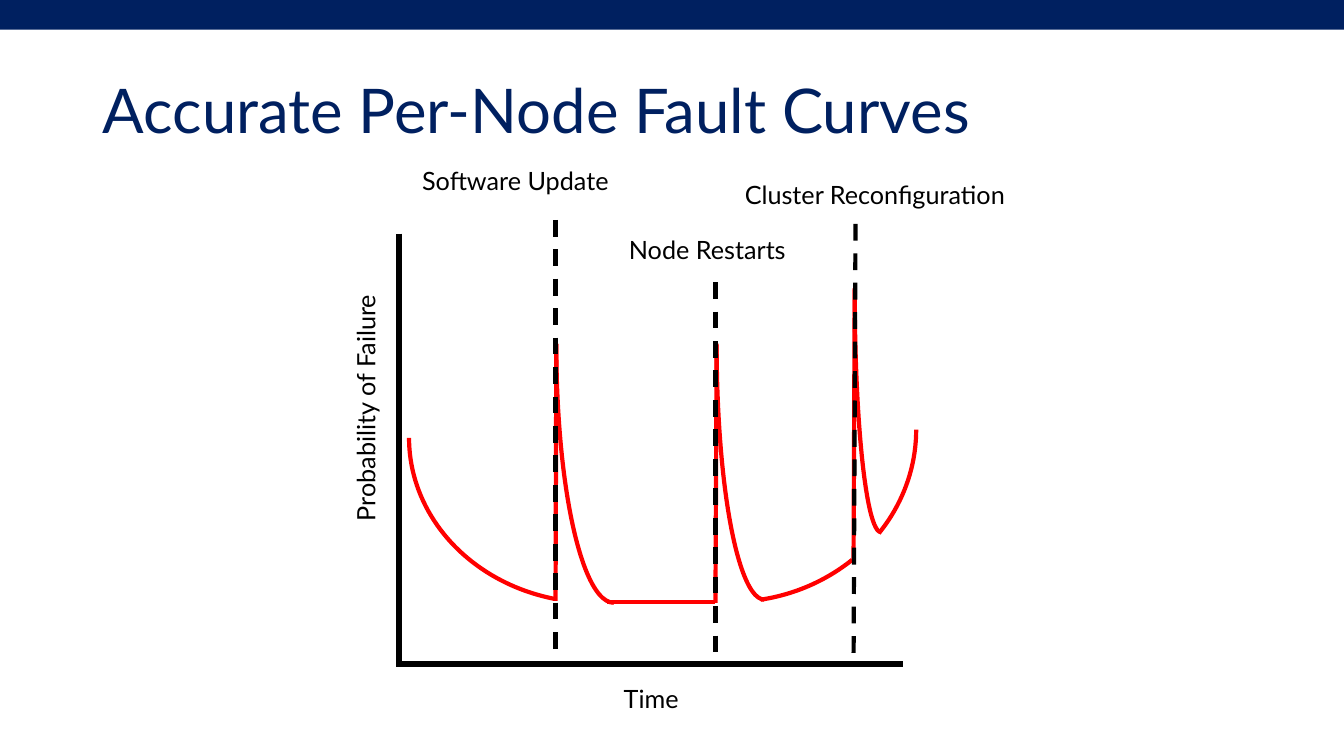
import pptx
import pptx.util
import pptx.dml.color
import pptx.enum.dml
import pptx.enum.shapes
import pptx.enum.text
import pptx.oxml.ns
import lxml.etree

Cm = pptx.util.Cm
Pt = pptx.util.Pt
SHAPE = pptx.enum.shapes.MSO_SHAPE
NAVY = pptx.dml.color.RGBColor(0x00, 0x20, 0x60)
RED = pptx.dml.color.RGBColor(0xFF, 0x00, 0x00)
BLACK = pptx.dml.color.RGBColor(0x00, 0x00, 0x00)
FONT = "Lato"

deck = pptx.Presentation()
deck.slide_width = Cm(33.87)
deck.slide_height = Cm(19.05)
page = deck.slides.add_slide(deck.slide_layouts[5])


def draw_line(ends, color, width):
    line = page.shapes.add_connector(
        pptx.enum.shapes.MSO_CONNECTOR.STRAIGHT, *[Cm(value) for value in ends]
    )
    line.line.color.rgb = color
    line.line.width = Pt(width)
    lxml.etree.SubElement(line._element.spPr, pptx.oxml.ns.qn("a:effectLst"))
    return line


bar = page.shapes.add_shape(SHAPE.RECTANGLE, 0, 0, deck.slide_width, Cm(0.75))
bar.shadow.inherit = False
bar.fill.solid()
bar.fill.fore_color.rgb = NAVY
bar.line.fill.background()

title = page.shapes.title
title.left, title.top, title.width, title.height = Cm(2.34), Cm(1.02), Cm(29.21), Cm(3.68)
title.text_frame.text = "Accurate Per-Node Fault Curves"
title.text_frame.word_wrap = True
title.text_frame.vertical_anchor = pptx.enum.text.MSO_ANCHOR.MIDDLE
para = title.text_frame.paragraphs[0]
para.alignment = pptx.enum.text.PP_ALIGN.LEFT
para.line_spacing = 0.9
para.font.name = FONT
para.font.size = Pt(44)
para.font.color.rgb = NAVY

fault_curves = [
    (10.31, 6.88, 9.35, 8.31, 104, 180),
    (14.02, 2.16, 2.9, 13.03, 90, 180),
    (18.06, 2.21, 2.41, 12.9, 90, 180),
    (13.74, 6.48, 9.35, 8.69, 47, 80),
    (21.54, 1.17, 1.32, 12.24, 90, 180),
    (13.74, 6.48, 9.35, 8.69, 0, 35),
]
for left, top, width, height, start, end in fault_curves:
    curve = page.shapes.add_shape(SHAPE.ARC, Cm(left), Cm(top), Cm(width), Cm(height))
    curve.shadow.inherit = False
    curve.adjustments[0] = start * 0.6
    curve.adjustments[1] = end * 0.6
    curve.fill.background()
    curve.line.color.rgb = RED
    curve.line.width = Pt(3)

steady_rate = (15.3, 15.16, 18.03, 15.16)
spikes = [
    (14, 15.14, 14.02, 8.66),
    (18.03, 15.19, 18.06, 8.69),
    (21.51, 14.12, 21.54, 7.26),
]
for ends in [steady_rate, *spikes]:
    draw_line(ends, RED, 3)

for axis in [(9.98, 16.74, 22.76, 16.74), (10.06, 5.89, 10.06, 16.74)]:
    draw_line(axis, BLACK, 4)

for event in [(14, 5.54, 14, 16.79), (18.03, 7.11, 18.03, 16.79), (21.56, 5.64, 21.51, 16.79)]:
    draw_line(event, BLACK, 3).line.dash_style = pptx.enum.dml.MSO_LINE.DASH

labels = [
    ("Probability of Failure", 6.02, 9.68, 6.38, 270),
    ("Time", 15.47, 17.09, 1.96, 0),
    ("Software Update", 10.39, 4.04, 5.28, 0),
    ("Node Restarts", 15.6, 5.77, 4.57, 0),
    ("Cluster Reconfiguration", 18.52, 4.39, 7.24, 0),
]
for text, left, top, width, rotation in labels:
    box = page.shapes.add_textbox(Cm(left), Cm(top), Cm(width), Cm(1.02))
    box.rotation = rotation
    box.text_frame.word_wrap = False
    box.text_frame.auto_size = pptx.enum.text.MSO_AUTO_SIZE.SHAPE_TO_FIT_TEXT
    para = box.text_frame.paragraphs[0]
    para.text = text
    para.font.name = FONT
    para.font.size = Pt(18)
    para.font.color.rgb = BLACK

deck.save("out.pptx")
